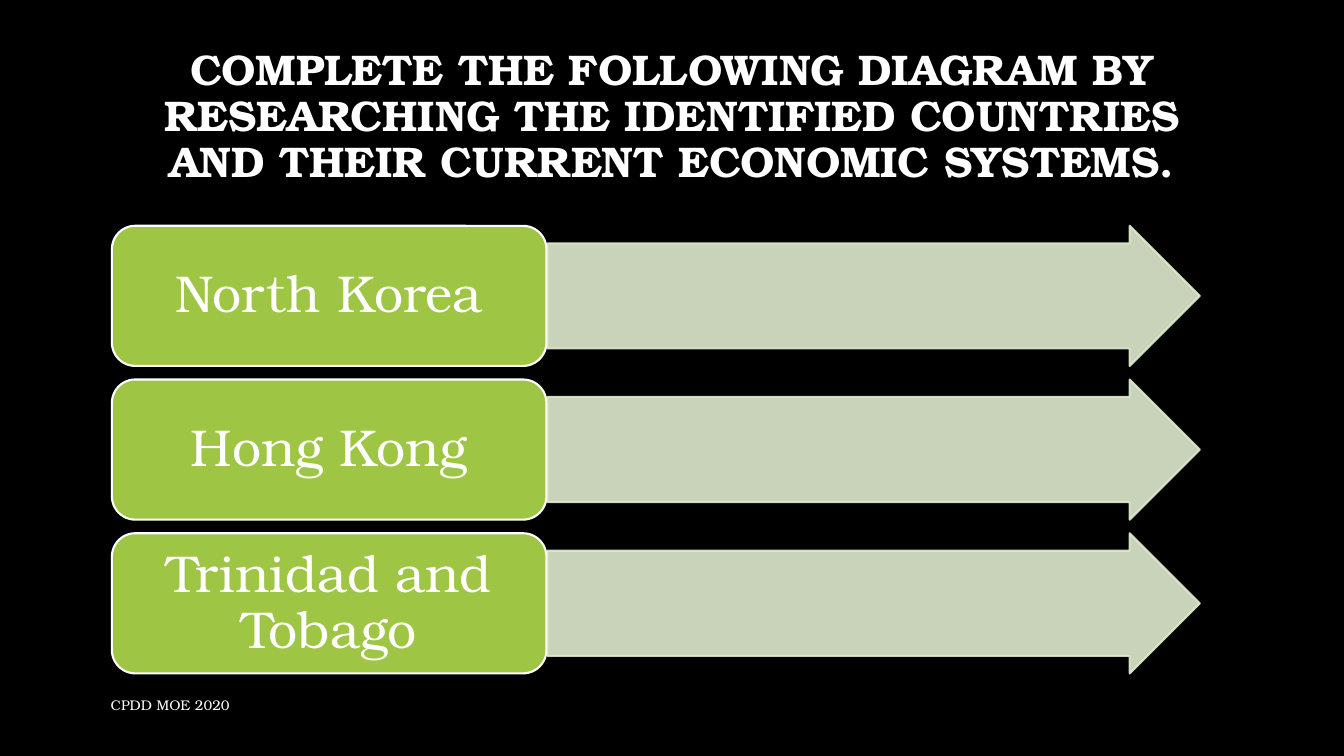
from dataclasses import dataclass

import lxml.etree
import pptx
import pptx.dml.color
import pptx.enum.shapes
import pptx.enum.text
import pptx.oxml.ns
import pptx.util

Inches = pptx.util.Inches
RGBColor = pptx.dml.color.RGBColor
Kind = pptx.enum.shapes.MSO_SHAPE
Align = pptx.enum.text.PP_ALIGN

BLACK = RGBColor(0x00, 0x00, 0x00)
WHITE = RGBColor(0xFF, 0xFF, 0xFF)
GREEN = RGBColor(0x9E, 0xC5, 0x44)
PALE = RGBColor(0xDF, 0xEA, 0xCF)
FONT = "TeX Gyre Bonum"
TOP, HIGH, PITCH = 2.24, 1.39, 3.05 / 2


@dataclass(frozen=True)
class Box:
    left: float
    top: float
    width: float
    height: float

    def place(self) -> tuple:
        return tuple(Inches(n) for n in (self.left, self.top, self.width, self.height))


@dataclass(frozen=True)
class Style:
    size: float
    bold: bool = False
    align: Align = Align.CENTER
    pads: tuple = (0.1, 0.05, 0.1, 0.05)
    space: float = 0.9


TITLE = Style(30.6, bold=True, pads=(0.1, 0.05, 0.1, 0.51))
LABEL = Style(37, pads=(0.15, 0.08, 0.15, 0.08))
FOOTER = Style(10, align=Align.LEFT, space=1.0)


def write(shape, text: str, style: Style) -> None:
    frame = shape.text_frame
    frame.text = text
    frame.word_wrap = True
    frame.vertical_anchor = pptx.enum.text.MSO_ANCHOR.MIDDLE
    pads = [Inches(pad) for pad in style.pads]
    frame.margin_left, frame.margin_top, frame.margin_right, frame.margin_bottom = pads
    para = frame.paragraphs[0]
    para.alignment = style.align
    para.line_spacing = style.space
    font = para.runs[0].font
    font.name = FONT
    font.size = pptx.util.Pt(style.size)
    font.bold = style.bold
    font.color.rgb = WHITE


def add_text(slide, box: Box, text: str, style: Style) -> None:
    write(slide.shapes.add_textbox(*box.place()), text, style)


def add_form(slide, kind: Kind, box: Box, fill: RGBColor, edge: RGBColor):
    shape = slide.shapes.add_shape(kind, *box.place())
    shape.shadow.inherit = False
    shape.fill.solid()
    shape.fill.fore_color.rgb = fill
    shape.line.color.rgb = edge
    shape.line.width = pptx.util.Pt(1.5)
    return shape


def fade(shape, share: int) -> None:
    qn = pptx.oxml.ns.qn
    for color in shape.element.spPr.iter(qn("a:srgbClr")):
        lxml.etree.SubElement(color, qn("a:alpha")).set("val", str(share * 1000))


def add_row(slide, index: int, name: str) -> None:
    top = TOP + index * PITCH
    arrow = add_form(slide, Kind.RIGHT_ARROW, Box(5.43, top, 6.47, HIGH), PALE, PALE)
    arrow.adjustments[0] = 0.75
    arrow.adjustments[1] = 0.5
    fade(arrow, 90)
    card = add_form(slide, Kind.ROUNDED_RECTANGLE, Box(1.11, top, 4.31, HIGH), GREEN, WHITE)
    write(card, name, LABEL)


def main() -> None:
    deck = pptx.Presentation()
    deck.slide_width, deck.slide_height = Inches(13.33), Inches(7.5)
    slide = deck.slides.add_slide(deck.slide_layouts[6])
    slide.background.fill.solid()
    slide.background.fill.fore_color.rgb = BLACK
    add_text(
        slide,
        Box(1, 0.67, 11.32, 1.45),
        "COMPLETE THE FOLLOWING DIAGRAM BY RESEARCHING THE IDENTIFIED COUNTRIES "
        "AND THEIR CURRENT ECONOMIC SYSTEMS.",
        TITLE,
    )
    add_text(slide, Box(1, 6.79, 7.3, 0.4), "CPDD MOE 2020", FOOTER)
    for index, name in enumerate(("North Korea", "Hong Kong", "Trinidad and Tobago")):
        add_row(slide, index, name)
    deck.save("out.pptx")


if __name__ == "__main__":
    main()
